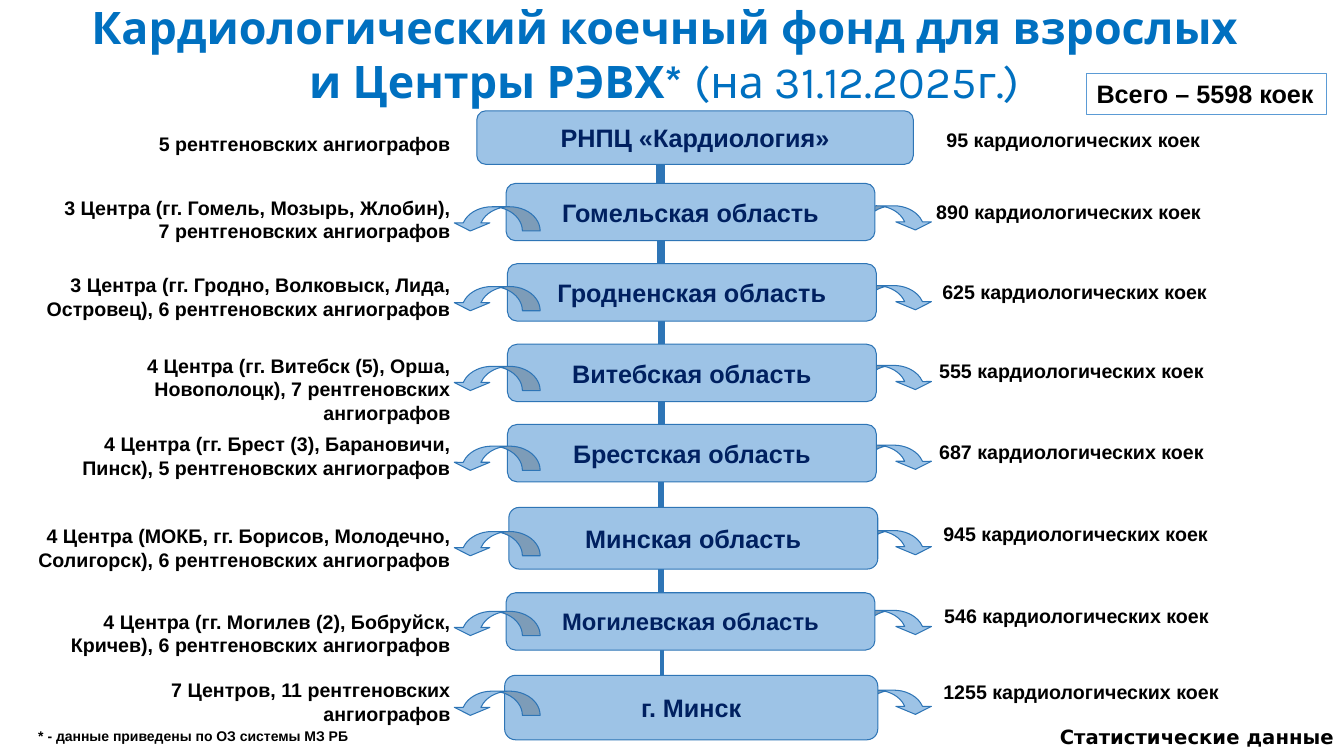
from dataclasses import dataclass

from lxml.etree import SubElement
from pptx import Presentation
from pptx.dml.color import RGBColor
from pptx.enum.shapes import MSO_CONNECTOR, MSO_SHAPE
from pptx.enum.text import MSO_ANCHOR, MSO_AUTO_SIZE, PP_ALIGN
from pptx.oxml.ns import qn
from pptx.util import Pt


@dataclass(frozen=True)
class Theme:
    """Colours, fonts and type sizes of the slide."""
    fill: str = "9DC3E6"
    edge: str = "2E75B6"
    frame: str = "5B9BD5"
    navy: str = "002060"
    blue: str = "0070C0"
    black: str = "000000"
    body: str = "Arial"
    head: str = "Karla"
    foot: str = "DejaVu Sans"
    title: float = 32
    name: float = 18
    label: float = 14
    note: float = 10


def write(frame, text, size, color, font, bold=True, align=PP_ALIGN.LEFT,
          anchor=MSO_ANCHOR.TOP, wrap=True, inset=(7.2, 3.6), light=""):
    """Fill a text frame with one paragraph, ending in an optional light run."""
    frame.auto_size = MSO_AUTO_SIZE.NONE
    frame.word_wrap = wrap
    frame.vertical_anchor = anchor
    frame.margin_left = frame.margin_right = Pt(inset[0])
    frame.margin_top = frame.margin_bottom = Pt(inset[1])
    para = frame.paragraphs[0]
    para.alignment = align
    for words, weight in ((text, bold), (light, False)):
        if words:
            run = para.add_run()
            run.text = words
            run.font.size = Pt(size)
            run.font.name = font
            run.font.bold = weight
            run.font.color.rgb = RGBColor.from_string(color)


class Board:
    """Draws styled elements on the current slide."""

    def __init__(self, slide, theme):
        self.slide = slide
        self.theme = theme

    def title(self, text, light, *area):
        """Place and format the title."""
        shape = self.slide.shapes.title
        shape.left, shape.top, shape.width, shape.height = map(Pt, area)
        write(shape.text_frame, text, self.theme.title, self.theme.blue,
              self.theme.head, align=PP_ALIGN.CENTER, light=light)

    def label(self, text, *area, size=None, font=None, **style):
        """Add a black bold text box."""
        box = self.slide.shapes.add_textbox(*map(Pt, area))
        write(box.text_frame, text, size or self.theme.label,
              self.theme.black, font or self.theme.body, **style)

    def shape(self, kind, *area, fill=None, edge=None):
        """Add a preset shape with a thin outline."""
        shape = self.slide.shapes.add_shape(kind, *map(Pt, area))
        shape.shadow.inherit = False
        if fill:
            shape.fill.solid()
            shape.fill.fore_color.rgb = RGBColor.from_string(fill)
        else:
            shape.fill.background()
        shape.line.color.rgb = RGBColor.from_string(edge or self.theme.edge)
        shape.line.width = Pt(0.75)
        return shape

    def node(self, text, *area, size=None):
        """Add a rounded box with a centred name."""
        box = self.shape(MSO_SHAPE.ROUNDED_RECTANGLE, *area,
                         fill=self.theme.fill)
        write(box.text_frame, text, size or self.theme.name, self.theme.navy,
              self.theme.body, align=PP_ALIGN.CENTER,
              anchor=MSO_ANCHOR.MIDDLE, wrap=False, inset=(0, 0))

    def total(self, text, *area):
        """Add the framed total."""
        box = self.shape(MSO_SHAPE.RECTANGLE, *area, edge=self.theme.frame)
        write(box.text_frame, text, self.theme.name, self.theme.black,
              self.theme.body)

    def arrow(self, left, top, flip=False):
        """Add a curved arrow, mirrored when it points left."""
        arrow = self.shape(MSO_SHAPE.CURVED_DOWN_ARROW, left, top, 62.6, 17.3,
                           fill=self.theme.fill)
        for index, value in enumerate((0.734, 1.468, 0.333)):
            arrow.adjustments[index] = value
        if flip:
            arrow._element.spPr.find(qn("a:xfrm")).set("flipH", "1")

    def stem(self, left, top, end):
        """Add a vertical line."""
        line = self.slide.shapes.add_connector(
            MSO_CONNECTOR.STRAIGHT, Pt(left), Pt(top), Pt(left), Pt(end))
        line.line.color.rgb = RGBColor.from_string(self.theme.edge)
        line.line.width = Pt(3)
        SubElement(line._element.spPr, qn("a:effectLst"))


@dataclass(frozen=True)
class Row:
    """One institution or region with its centres and beds."""
    name: str
    box: tuple
    sites: str
    site: tuple
    beds: int
    bed: tuple
    stem: float = 0
    size: float = 18


ROWS = (
    Row("РНПЦ «Кардиология»", (340.6, 79.2, 311.8, 38.2),
        "5 рентгеновских ангиографов", (90.7, 284), 95, (669, 88)),
    Row("Гомельская область", (361.5, 131, 263.5, 41),
        "3 Центра (гг. Гомель, Мозырь, Жлобин), 7 рентгеновских ангиографов",
        (136.1, 293.5), 890, (661.7, 139), 470.2),
    Row("Гродненская область", (362.5, 188.4, 263.5, 41),
        "3 Центра (гг. Гродно, Волковыск, Лида, Островец), "
        "6 рентгеновских ангиографов",
        (191.5, 310.5), 625, (666, 196.6), 471),
    Row("Витебская область", (362.5, 245.9, 263.5, 41),
        "4 Центра (гг. Витебск (5), Орша, Новополоцк), "
        "7 рентгеновских ангиографов",
        (249.1, 318), 555, (663.8, 252.7), 473),
    Row("Брестская область", (362.5, 303.2, 263.5, 41),
        "4 Центра (гг. Брест (3), Барановичи, Пинск), "
        "5 рентгеновских ангиографов",
        (305.3, 293), 687, (663.8, 311), 473.5),
    Row("Минская область", (363.5, 362.5, 263.5, 44),
        "4 Центра (МОКБ, гг. Борисов, Молодечно, Солигорск), "
        "6 рентгеновских ангиографов",
        (370.8, 312), 945, (666.7, 369.4), 472.3),
    Row("Могилевская область", (361.5, 423.4, 263.5, 41),
        "4 Центра (гг. Могилев (2), Бобруйск, Кричев), "
        "6 рентгеновских ангиографов",
        (432, 301), 546, (667.4, 427.7), 471.6, 17),
    Row("г. Минск", (360.5, 482.4, 266.5, 46),
        "7 Центров, 11 рентгеновских ангиографов",
        (481, 268.5), 1255, (666.7, 482.4), 473),
)


def main():
    """Build and save the slide."""
    deck = Presentation()
    deck.slide_width, deck.slide_height = Pt(960), Pt(540)
    theme = Theme()
    board = Board(deck.slides.add_slide(deck.slide_layouts[5]), theme)
    board.title("Кардиологический коечный фонд для взрослых и Центры РЭВХ* ",
                "(на 31.12.2025г.)", 49.7, -3.6, 850.3, 85)
    tops = [147 + 57 * step + (4 if step > 3 else 0) for step in range(7)]
    for top in tops:
        board.arrow(604, top)
    for row in ROWS[1:]:
        board.stem(row.stem, 100, row.box[1] + 20)
    for row in ROWS:
        board.node(row.name, *row.box, size=row.size)
        top, width = row.site
        board.label(row.sites, 329 - width, top, width, 41,
                    align=PP_ALIGN.RIGHT)
        board.label(f"{row.beds} кардиологических коек", *row.bed, 236, 24.5)
    for top in tops:
        board.arrow(323.3, top + 0.7, flip=True)
    board.total("Всего – 5598 коек", 776.2, 52.6, 171.5, 29)
    board.label("Статистические данные", 0, 514, 960, 24.5, font=theme.foot,
                align=PP_ALIGN.RIGHT)
    board.label("* - данные приведены по ОЗ системы МЗ РБ", 20.2, 516.2,
                243.4, 19.4, size=theme.note)
    deck.save("out.pptx")


if __name__ == "__main__":
    main()
